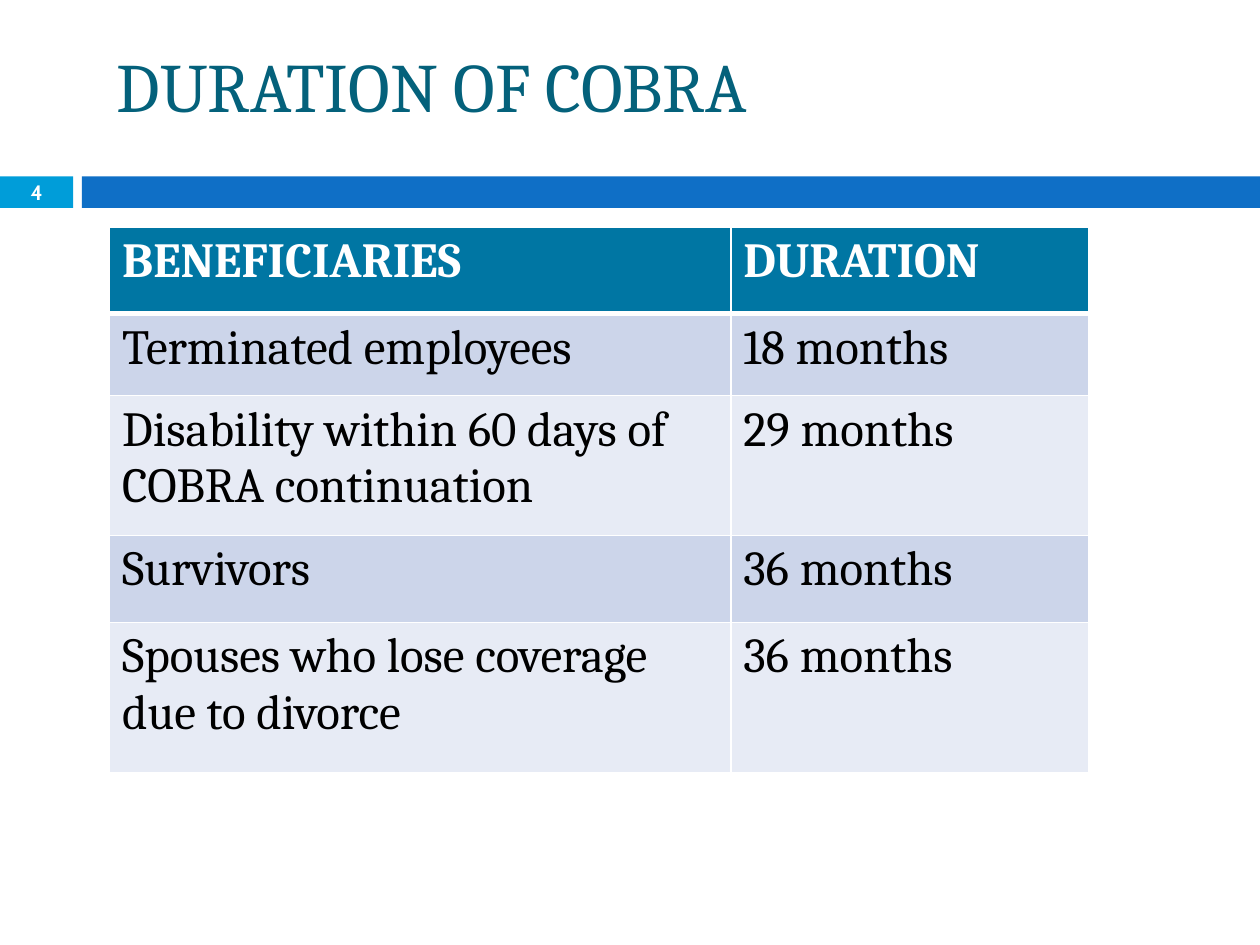
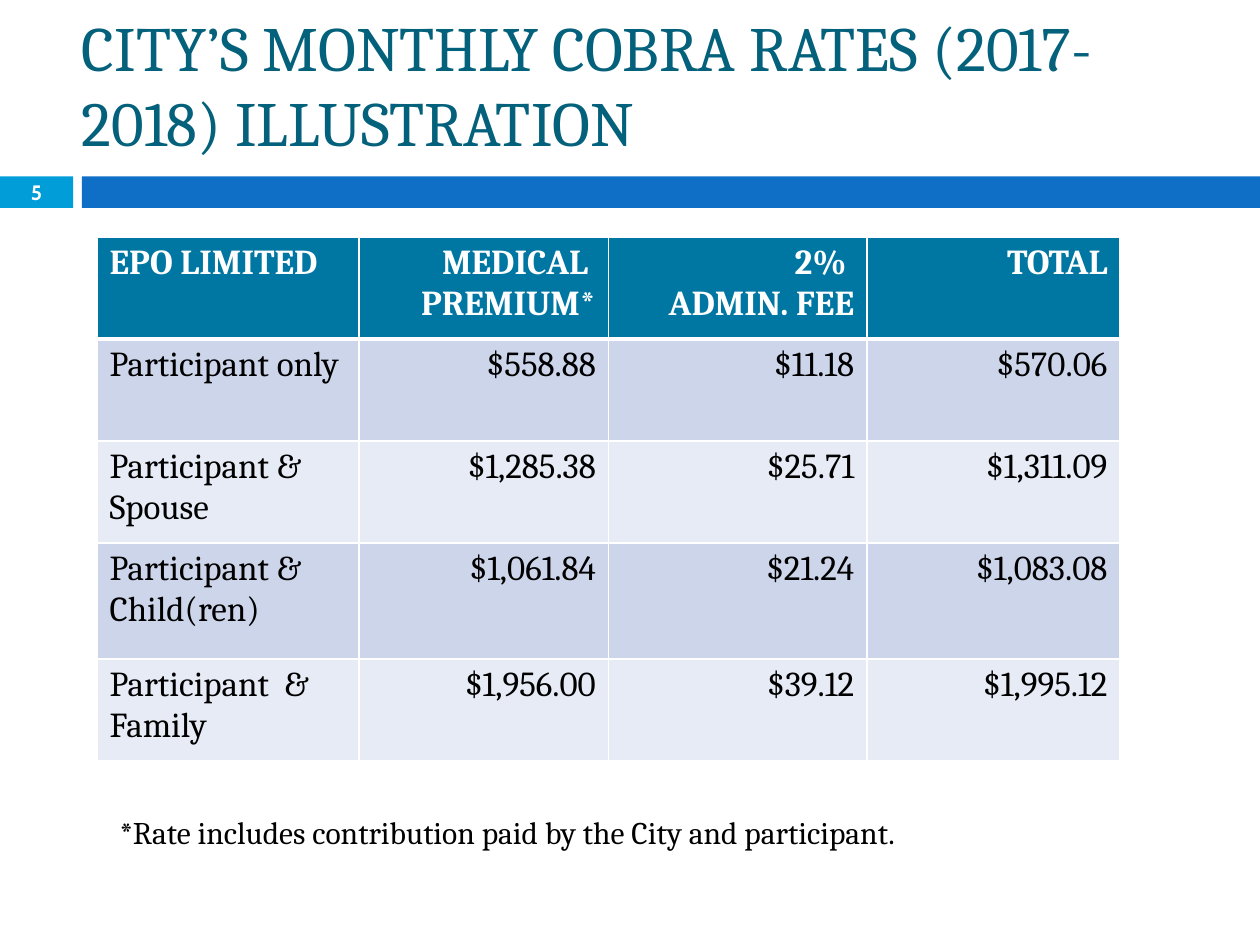
import lxml.etree
import pptx
import pptx.dml.color
import pptx.enum.shapes
import pptx.enum.text
import pptx.oxml.ns
import pptx.util

Inches, Pt = pptx.util.Inches, pptx.util.Pt
ALIGN = pptx.enum.text.PP_ALIGN
ANCHOR = pptx.enum.text.MSO_ANCHOR

SERIF, SANS = "Cambria", "Cabin"
WHITE, BLACK = "FFFFFF", "000000"
TITLE, TAB, BAND = "04617B", "009DD9", "0F6FC6"
HEAD, ODD, EVEN = "0076A3", "CCD5EA", "E7EBF5"
BAND_TOP, BAND_HIGH, TAB_WIDE = 1.4, 0.25, 0.58


def color(code):
    return pptx.dml.color.RGBColor.from_string(code)


def style(frame, size, code, font=SERIF, bold=False, align=ALIGN.LEFT):
    for para in frame.paragraphs:
        para.alignment = align
        para.font.name = font
        para.font.size = Pt(size)
        para.font.bold = bold
        para.font.color.rgb = color(code)


def add_text(slide, box, text, size, code, anchor=ANCHOR.TOP, **looks):
    frame = slide.shapes.add_textbox(*map(Inches, box)).text_frame
    frame.word_wrap = True
    frame.vertical_anchor = anchor
    frame.text = text
    style(frame, size, code, **looks)


def add_bar(slide, box, code):
    bar = slide.shapes.add_shape(
        pptx.enum.shapes.MSO_SHAPE.RECTANGLE, *map(Inches, box))
    bar.shadow.inherit = False
    bar.fill.solid()
    bar.fill.fore_color.rgb = color(code)
    bar.line.fill.background()


def add_frame(deck, title, box, size, number):
    """Add a slide with its title, band and page number."""
    slide = deck.slides.add_slide(deck.slide_layouts[6])
    add_bar(slide, (0, BAND_TOP, TAB_WIDE, BAND_HIGH), TAB)
    add_bar(slide, (0.65, BAND_TOP, 9.35, BAND_HIGH), BAND)
    add_text(slide, box, title, size, TITLE, ANCHOR.MIDDLE)
    add_text(slide, (0, BAND_TOP - 0.01, TAB_WIDE, BAND_HIGH + 0.02),
             str(number), 11.9, WHITE, ANCHOR.MIDDLE,
             font=SANS, bold=True, align=ALIGN.CENTER)
    return slide


def add_edges(cell, top, bottom):
    """Draw white cell borders; top and bottom are widths in points."""
    props = cell._tc.get_or_add_tcPr()
    sides = {"L": 1, "R": 1, "T": top, "B": bottom}
    for spot, (side, width) in enumerate(sides.items()):
        line = lxml.etree.Element(pptx.oxml.ns.qn(f"a:ln{side}"), w=str(Pt(width)))
        fill = lxml.etree.SubElement(line, pptx.oxml.ns.qn("a:solidFill"))
        lxml.etree.SubElement(fill, pptx.oxml.ns.qn("a:srgbClr"), val=WHITE)
        props.insert(spot, line)


def add_grid(slide, left, top, widths, heights, rows, size, align):
    """Add a banded table; align applies to all columns after the first."""
    table = slide.shapes.add_table(
        len(rows), len(widths), Inches(left), Inches(top),
        Inches(sum(widths)), Inches(sum(heights))).table
    for column, width in zip(table.columns, widths):
        column.width = Inches(width)
    for r, (height, row) in enumerate(zip(heights, rows)):
        table.rows[r].height = Inches(height)
        head = r == 0
        for c, text in enumerate(row):
            cell = table.cell(r, c)
            cell.text = text
            cell.fill.solid()
            cell.fill.fore_color.rgb = color(HEAD if head else ODD if r % 2 else EVEN)
            style(cell.text_frame, size, WHITE if head else BLACK, bold=head,
                  align=align if c else ALIGN.LEFT)
            add_edges(cell, 3 if r == 1 else 1, 3 if head else 1)


def add_terms(deck):
    slide = add_frame(deck, "DURATION OF COBRA", (0.83, 0.4, 8.48, 0.55), 39.6, 4)
    rows = [
        ("BENEFICIARIES", "DURATION"),
        ("Terminated employees", "18 months"),
        ("Disability within 60 days of COBRA continuation", "29 months"),
        ("Survivors", "36 months"),
        ("Spouses who lose coverage due to divorce", "36 months"),
    ]
    add_grid(slide, 0.87, 1.8, (4.93, 2.84), (0.69, 0.65, 1.11, 0.69, 1.19),
             rows, 28, ALIGN.LEFT)


def add_rates(deck):
    slide = add_frame(deck, "CITY’S MONTHLY COBRA RATES (2017-2018) ILLUSTRATION",
                      (0.55, 0.39, 8.98, 0.55), 36, 5)
    rows = [
        ("EPO LIMITED", "MEDICAL  PREMIUM*", "2% \nADMIN. FEE", "TOTAL"),
        ("Participant only", "$558.88", "$11.18", "$570.06"),
        ("Participant & Spouse", "$1,285.38", "$25.71", "$1,311.09"),
        ("Participant & Child(ren)", "$1,061.84", "$21.24", "$1,083.08"),
        ("Participant  & Family", "$1,956.00", "$39.12", "$1,995.12"),
    ]
    add_grid(slide, 0.77, 1.88, (2.08, 1.98, 2.05, 2.01),
             (0.81, 0.81, 0.81, 0.92, 0.81), rows, 20, ALIGN.RIGHT)
    add_text(slide, (0.85, 6.4, 7.32, 0.4),
             "*Rate includes contribution paid by the City and participant.",
             18, BLACK)


def main():
    deck = pptx.Presentation()
    deck.slide_width, deck.slide_height = Inches(10), Inches(7.5)
    add_terms(deck)
    add_rates(deck)
    deck.save("out.pptx")


if __name__ == "__main__":
    main()
